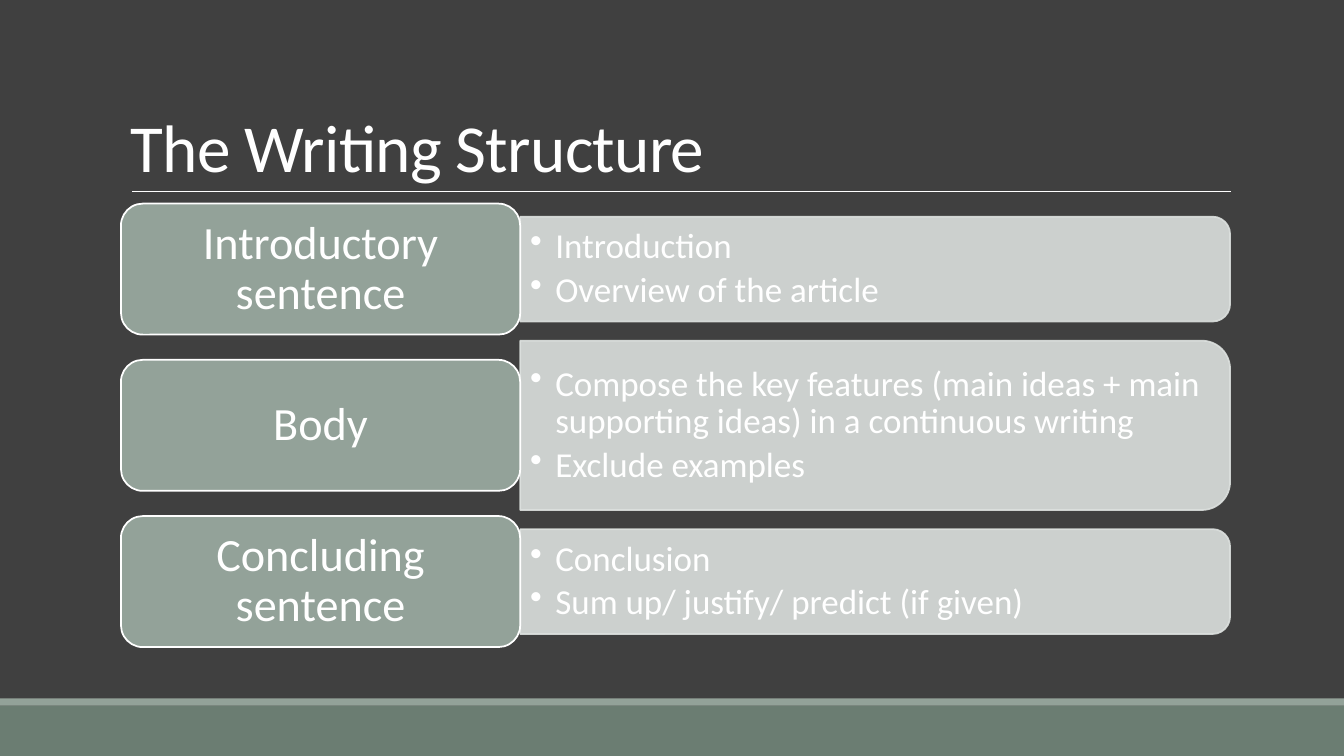
from lxml import etree
from pptx import Presentation
from pptx import util as u
from pptx.dml.color import RGBColor
from pptx.enum import shapes, text
from pptx.oxml import ns

WIDTH, HEIGHT = 13.33, 7.5
CHARCOAL = RGBColor(0x40, 0x40, 0x40)
DARK_SAGE = RGBColor(0x6B, 0x7D, 0x72)
SAGE = RGBColor(0x93, 0xA2, 0x99)
PALE_SAGE = RGBColor(0xDC, 0xE0, 0xDE)
WHITE = RGBColor(0xFF, 0xFF, 0xFF)
FONT = "Calibri"

# Grid: a label column and a panel column, one row per part of the text
LABEL_LEFT, LABEL_WIDTH, LABEL_HEIGHT = 1.2, 3.96, 1.3
PANEL_LEFT, PANEL_WIDTH = LABEL_LEFT + LABEL_WIDTH, 7.04
FIRST_MIDDLE, ROW_PITCH = 2.67, 1.55

# Label, panel height, bullet points
ROWS = [
    ("Introductory sentence", 1.04, ["Introduction", "Overview of the article"]),
    ("Body", 1.68, [
        "Compose the key features (main ideas + main supporting ideas) "
        "in a continuous writing",
        "Exclude examples",
    ]),
    ("Concluding sentence", 1.04,
     ["Conclusion", "Sum up/ justify/ predict (if given)"]),
]


def inches(*lengths):
    return [u.Inches(length) for length in lengths]


def set_alpha(color_format_parent, percent):
    """Make every solid colour below an element partly transparent."""
    for color in color_format_parent.iter(ns.qn("a:srgbClr")):
        alpha = etree.SubElement(color, ns.qn("a:alpha"))
        alpha.set("val", str(percent * 1000))


def add_bullet(paragraph):
    properties = paragraph._p.get_or_add_pPr()
    properties.set("marL", str(u.Inches(0.25)))
    properties.set("indent", str(-u.Inches(0.25)))
    etree.SubElement(properties, ns.qn("a:buChar")).set("char", "•")


def write(shape, lines, size, align=text.PP_ALIGN.LEFT,
          anchor=text.MSO_ANCHOR.MIDDLE, line_spacing=0.9, space_after=0,
          margins=(0.1, 0.05), bullets=False, tracking=None):
    """Fill a shape with one paragraph per line."""
    frame = shape.text_frame
    frame.word_wrap = True
    frame.vertical_anchor = anchor
    frame.margin_left = frame.margin_right = u.Inches(margins[0])
    frame.margin_top = frame.margin_bottom = u.Inches(margins[1])
    for index, line in enumerate(lines):
        paragraph = frame.add_paragraph() if index else frame.paragraphs[0]
        paragraph.alignment = align
        paragraph.line_spacing = line_spacing
        paragraph.space_after = u.Pt(space_after)
        if bullets:
            add_bullet(paragraph)
        run = paragraph.add_run()
        run.text = line
        run.font.name = FONT
        run.font.size = u.Pt(size)
        run.font.color.rgb = WHITE
        if tracking is not None:
            run.font._element.set("spc", str(round(tracking * 100)))


def add_box(slide, kind, left, top, width, height, fill, line=None):
    shape = slide.shapes.add_shape(kind, *inches(left, top, width, height))
    shape.shadow.inherit = False
    shape.fill.solid()
    shape.fill.fore_color.rgb = fill
    if line is None:
        shape.line.fill.background()
    else:
        shape.line.color.rgb = line
        shape.line.width = u.Pt(1.25)
    return shape


def add_title(slide, title):
    box = slide.shapes.add_textbox(*inches(LABEL_LEFT, 0.31, 11, 1.59))
    write(box, [title], 48, anchor=text.MSO_ANCHOR.BOTTOM,
          line_spacing=0.85, tracking=-0.5)
    rule = slide.shapes.add_connector(
        shapes.MSO_CONNECTOR.STRAIGHT, *inches(1.31, 1.9, 12.21, 1.9))
    rule.line.color.rgb = WHITE
    rule.line.width = u.Pt(0.5)
    etree.SubElement(rule._element.spPr, ns.qn("a:effectLst"))


def add_panel(slide, middle, height, points):
    """Add a panel rounded on its right side, with bullet points over it."""
    center = PANEL_LEFT + PANEL_WIDTH / 2
    panel = add_box(slide, shapes.MSO_SHAPE.ROUND_2_SAME_RECTANGLE,
                    center - height / 2, middle - PANEL_WIDTH / 2,
                    height, PANEL_WIDTH, PALE_SAGE, PALE_SAGE)
    panel.rotation = 90
    set_alpha(panel._element.spPr, 90)
    text_height = 0.9 * height
    box = slide.shapes.add_textbox(*inches(
        PANEL_LEFT, middle - text_height / 2,
        PANEL_WIDTH - 0.05 * height, text_height))
    write(box, points, 25, space_after=4, bullets=True)


def add_label(slide, middle, label):
    shape = add_box(slide, shapes.MSO_SHAPE.ROUNDED_RECTANGLE,
                    LABEL_LEFT, middle - LABEL_HEIGHT / 2,
                    LABEL_WIDTH, LABEL_HEIGHT, SAGE, WHITE)
    write(shape, [label], 33, align=text.PP_ALIGN.CENTER, margins=(0.14, 0.07))


def main():
    presentation = Presentation()
    presentation.slide_width, presentation.slide_height = inches(WIDTH, HEIGHT)
    slide = presentation.slides.add_slide(presentation.slide_layouts[6])
    slide.background.fill.solid()
    slide.background.fill.fore_color.rgb = CHARCOAL

    for top, height, color in [(7, 0.5, DARK_SAGE), (6.93, 0.07, SAGE)]:
        add_box(slide, shapes.MSO_SHAPE.RECTANGLE, 0, top, WIDTH, height, color)
    add_title(slide, "The Writing Structure")
    for index, (label, panel_height, points) in enumerate(ROWS):
        middle = FIRST_MIDDLE + index * ROW_PITCH
        add_panel(slide, middle, panel_height, points)
        add_label(slide, middle, label)

    presentation.save("out.pptx")


if __name__ == "__main__":
    main()
